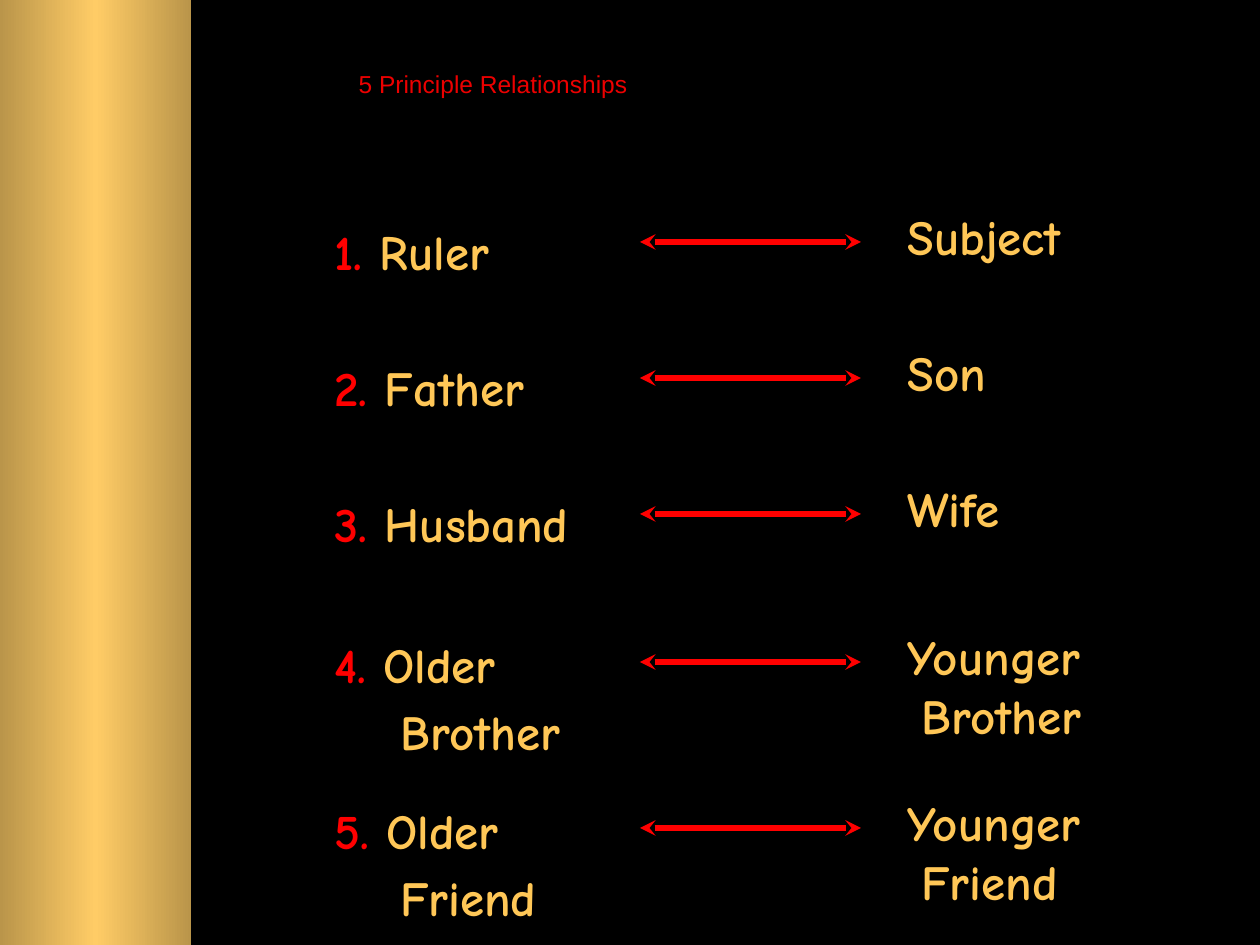
from lxml import etree
from pptx import Presentation
from pptx import util as u
from pptx.dml.color import RGBColor
from pptx.enum import shapes, text
from pptx.oxml import parse_xml
from pptx.oxml.ns import nsdecls, qn

# Content: number, left role, right role, top of the row
TITLE = "5 Principle Relationships"
RELATIONSHIPS = [
    ("1.", "Ruler", "Subject", 200),
    ("2.", "Father", "Son", 336),
    ("3.", "Husband", "Wife", 472),
    ("4.", "Older\vBrother", "Younger\vBrother", 620),
    ("5.", "Older\vFriend", "Younger\vFriend", 786),
]
RED, GOLD, BLACK = "FF0000", "FFC757", "000000"
BAR_STOPS = [(0, "BA954A"), (50, "FFCC66"), (100, "BA954A")]

LEFT_X, ARROW_X, RIGHT_X = 305, 640, 861
LABEL_W, LINE_H = 340, 66
ARROW_DROP = 42
LEFT_DROP = 7  # single left labels sit slightly below the right ones


def px(n):
    return u.Emu(n * 914400 // 126)


def rgb(value):
    return RGBColor.from_string(value)


def add_label(slide, x, y, runs, first, margin, spacing):
    """Text box with a hanging indent: first line at first, others at margin."""
    lines = 1 + sum(words.count("\v") for words, _ in runs)
    frame = slide.shapes.add_textbox(px(x), px(y), px(LABEL_W), px(lines * LINE_H)).text_frame
    frame.word_wrap = True
    paragraph = frame.paragraphs[0]
    paragraph.text = runs[0][0]
    for words, _ in runs[1:]:
        for i, line in enumerate(words.split("\v")):
            if i:
                paragraph.add_line_break()
            paragraph.add_run().text = line
    paragraph.line_spacing = spacing
    properties = paragraph._p.get_or_add_pPr()
    properties.set("marL", str(px(margin)))
    properties.set("indent", str(px(first - margin)))
    for i, run in enumerate(paragraph.runs):
        run.font.name, run.font.size, run.font.bold = "Comic Neue", u.Pt(28), True
        run.font.color.rgb = rgb(runs[min(i, len(runs) - 1)][1] if len(runs) > 1 else GOLD)


def add_arrow(slide, y):
    arrow = slide.shapes.add_connector(
        shapes.MSO_CONNECTOR.STRAIGHT, px(ARROW_X), px(y), px(RIGHT_X), px(y))
    arrow.line.color.rgb = rgb(RED)
    arrow.line.width = u.Pt(3)
    for end in ("a:headEnd", "a:tailEnd"):
        etree.SubElement(arrow.line._get_or_add_ln(), qn(end), type="stealth")
    etree.SubElement(arrow._element.spPr, qn("a:effectLst"))


prs = Presentation()
prs.slide_width, prs.slide_height = px(1260), px(945)
slide = prs.slides.add_slide(prs.slide_layouts[5])
slide.background.fill.solid()
slide.background.fill.fore_color.rgb = rgb(BLACK)

# Gold bar
bar = slide.shapes.add_shape(shapes.MSO_SHAPE.RECTANGLE, 0, 0, px(191), px(945))
bar.shadow.inherit = False
bar.line.fill.background()
stops = "".join(f'<a:gs pos="{pos * 1000}"><a:srgbClr val="{color}"/></a:gs>'
                for pos, color in BAR_STOPS)
bar._element.spPr.find(qn("a:prstGeom")).addnext(parse_xml(
    f'<a:gradFill {nsdecls("a")}><a:gsLst>{stops}</a:gsLst><a:lin ang="0"/></a:gradFill>'))

# Title
title = slide.shapes.title
title.left, title.top, title.width, title.height = px(346), px(63), px(766), px(116)
title.text_frame.text = TITLE
title.text_frame.vertical_anchor = text.MSO_ANCHOR.TOP
heading = title.text_frame.paragraphs[0]
heading.alignment = text.PP_ALIGN.LEFT
heading.font.name, heading.font.size = "Arial", u.Pt(14)
heading.font.color.rgb = rgb("EC0000")

# Relationship rows
for number, left, right, top in RELATIONSHIPS:
    drop = 0 if "\v" in left else LEFT_DROP
    add_label(slide, LEFT_X, top + drop, [(number, RED), (" " + left, GOLD)], 17, 83, 1.14)
    add_arrow(slide, top + ARROW_DROP)
    add_label(slide, RIGHT_X, top, [(right, GOLD)], 34, 48, 1.0)

prs.save("out.pptx")
